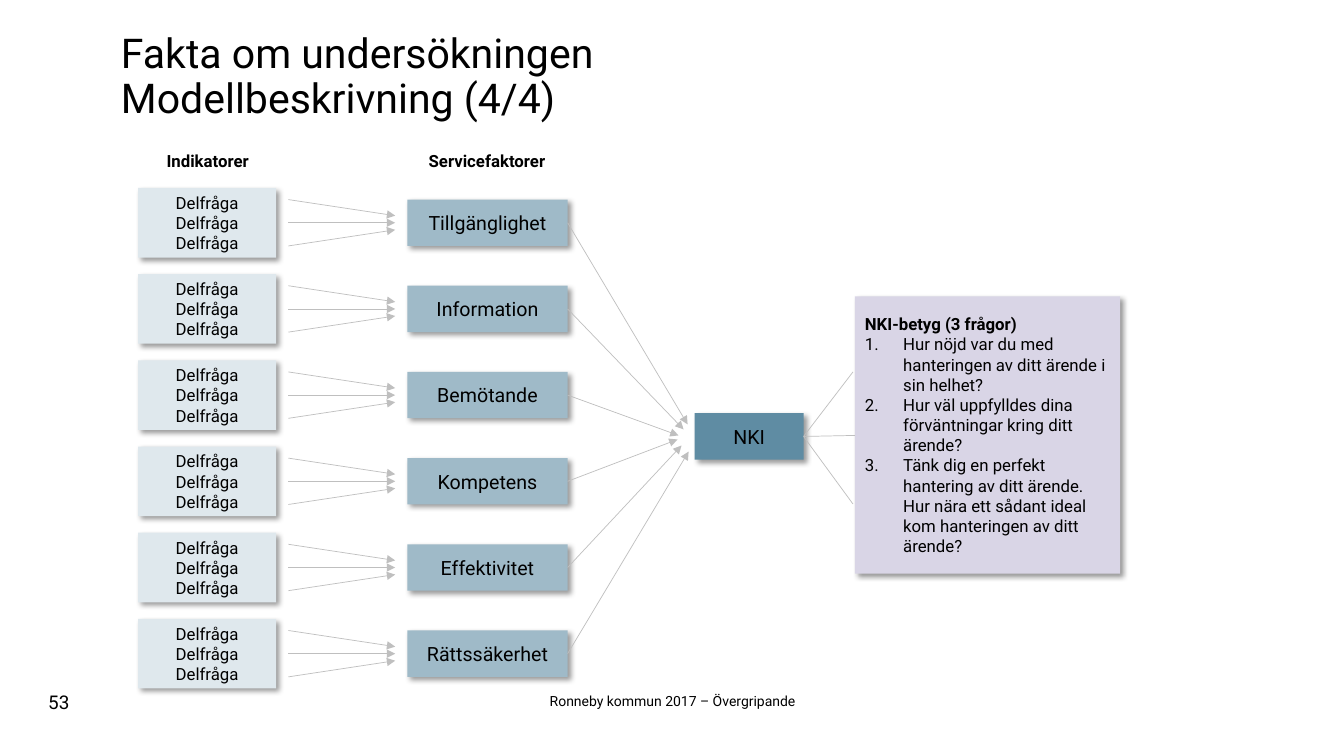
"""Build the slide that explains the NKI model."""
from lxml.etree import SubElement
from pptx import Presentation
from pptx.dml.color import RGBColor
from pptx.enum.shapes import MSO_CONNECTOR, MSO_SHAPE
from pptx.enum.text import MSO_ANCHOR, MSO_AUTO_SIZE, PP_ALIGN
from pptx.oxml.ns import qn
from pptx.util import Inches, Pt

TITLE = "Fakta om undersökningen\nModellbeskrivning (4/4)"
FACTORS = ["Tillgänglighet", "Information", "Bemötande",
           "Kompetens", "Effektivitet", "Rättssäkerhet"]
PARTS = ["Delfråga"] * 3
GRADE = "NKI-betyg (3 frågor)"
ASKS = ["Hur nöjd var du med hanteringen av ditt ärende i sin helhet?",
        "Hur väl uppfylldes dina förväntningar kring ditt ärende?",
        "Tänk dig en perfekt hantering av ditt ärende. "
        "Hur nära ett sådant ideal kom hanteringen av ditt ärende?"]
LABELS = [
    ("53", (0.38, 6.8, 0.48, 0.33), {"size": 13.5, "wrap": False}),
    ("Ronneby kommun 2017 – Övergripande", (5.33, 6.82, 2.68, 0.27),
     {"size": 10, "align": PP_ALIGN.CENTER, "wrap": False}),
    ("Indikatorer", (1.29, 1.45, 1.54, 0.3),
     {"size": 12, "align": PP_ALIGN.CENTER, "bold": True}),
    ("Servicefaktorer", (3.77, 1.45, 2.12, 0.3),
     {"size": 12, "align": PP_ALIGN.CENTER, "bold": True}),
]
TIPS = [(6.82, 4.21), (6.78, 4.26), (6.73, 4.32),
        (6.72, 4.36), (6.76, 4.42), (6.83, 4.48)]
ENDS = [(8.46, 3.69), (8.48, 4.32), (8.46, 5)]

WIDE, HIGH = 13.33, 7.5
TOP, STEP = 2.21, 0.855
PART = (1.37, 1.37, 0.69)
FACTOR = (4.04, 1.59, 0.46)
HUB = (6.89, 1.08, 0.46)
NOTE = (8.48, 2.63, 2.75)
MID = 4.33
GAP = 0.12
FAN = [(-0.23, -0.07), (0, 0), (0.23, 0.07)]
INK, GREY = "000000", "BFBFBF"
PALE, BLUE, DEEP, LILAC = "DFE8ED", "9FBAC8", "5F8CA3", "D9D5E6"


def color(code):
    """Turn a hex string into a colour."""
    return RGBColor.from_string(code)


def write(frame, lines, size, align=PP_ALIGN.LEFT, bold=False, wrap=True):
    """Fill a text frame, one paragraph per line."""
    frame.word_wrap = wrap
    for i, line in enumerate(lines):
        para = frame.add_paragraph() if i else frame.paragraphs[0]
        para.text = line
        para.alignment = align
        for gap in para._p.findall(qn("a:br")):
            SubElement(gap, qn("a:rPr"), sz=str(round(size * 100)))
        for run in para.runs:
            font = {"name": "Roboto", "size": Pt(size), "bold": bold}
            for key, value in font.items():
                setattr(run.font, key, value)
            run.font.color.rgb = color(INK)


def box(shapes, col, mid, fill, lines, size, align=PP_ALIGN.CENTER):
    """Draw a shaded box centred on a height."""
    left, wide, high = col
    item = shapes.add_shape(MSO_SHAPE.RECTANGLE, Inches(left),
                            Inches(mid - high / 2), Inches(wide), Inches(high))
    item.fill.solid()
    item.fill.fore_color.rgb = color(fill)
    item.line.fill.background()
    item.shadow.inherit = False
    glow = SubElement(item._element.spPr.find(qn("a:effectLst")),
                      qn("a:outerShdw"), blurRad=str(Pt(4)), dist=str(Pt(3)),
                      dir="2700000", algn="tl", rotWithShape="0")
    tint = SubElement(glow, qn("a:srgbClr"), val=INK)
    SubElement(tint, qn("a:alpha"), val="40000")
    item.text_frame.vertical_anchor = MSO_ANCHOR.MIDDLE
    write(item.text_frame, lines, size, align)
    return item


def link(shapes, start, end, head=True):
    """Draw a thin line, with an arrowhead if wanted."""
    line = shapes.add_connector(MSO_CONNECTOR.STRAIGHT,
                                *map(Inches, start + end))
    line.line.color.rgb = color(GREY)
    line.line.width = Pt(0.5)
    if head:
        SubElement(line.line._get_or_add_ln(), qn("a:tailEnd"), type="triangle")
    SubElement(line._element.spPr, qn("a:effectLst"))


def name(slide):
    """Place and format the title."""
    title = slide.shapes.title
    spot = {"left": 1.1, "top": 0.63, "width": 11.42, "height": 0.63}
    for key, value in spot.items():
        setattr(title, key, Inches(value))
    frame = title.text_frame
    frame.auto_size = MSO_AUTO_SIZE.NONE
    frame.vertical_anchor = MSO_ANCHOR.BOTTOM
    write(frame, [TITLE], 29.3)
    frame.paragraphs[0].line_spacing = 0.9


def rows(shapes):
    """Draw each row of parts, factor and arrows."""
    near = PART[0] + PART[1] + GAP
    far = FACTOR[0] - GAP
    for i, (factor, tip) in enumerate(zip(FACTORS, TIPS)):
        mid = TOP + i * STEP
        box(shapes, PART, mid, PALE, PARTS, 12)
        box(shapes, FACTOR, mid, BLUE, [factor], 14)
        for out, into in FAN:
            link(shapes, (near, mid + out), (far, mid + into))
        link(shapes, (FACTOR[0] + FACTOR[1], mid), tip)


def note(shapes):
    """Draw the hub, the note and the lines between them."""
    box(shapes, HUB, MID, DEEP, ["NKI"], 14)
    item = box(shapes, NOTE, 4.315, LILAC, [GRADE] + ASKS, 12, PP_ALIGN.LEFT)
    head, *asks = item.text_frame.paragraphs
    head.runs[0].font.bold = True
    for ask in asks:
        props = ask._p.get_or_add_pPr()
        props.set("marL", str(Inches(0.38)))
        props.set("indent", str(-Inches(0.38)))
        SubElement(props, qn("a:buFont"), typeface="+mj-lt")
        SubElement(props, qn("a:buAutoNum"), type="arabicPeriod")
    for end in ENDS:
        link(shapes, end, (HUB[0] + HUB[1], MID), False)


def main():
    """Build and save the deck."""
    deck = Presentation()
    deck.slide_width, deck.slide_height = Inches(WIDE), Inches(HIGH)
    slide = deck.slides.add_slide(deck.slide_layouts[5])
    name(slide)
    rows(slide.shapes)
    note(slide.shapes)
    for text, spot, look in LABELS:
        label = slide.shapes.add_textbox(*map(Inches, spot))
        write(label.text_frame, [text], **look)
    deck.save("out.pptx")


if __name__ == "__main__":
    main()
